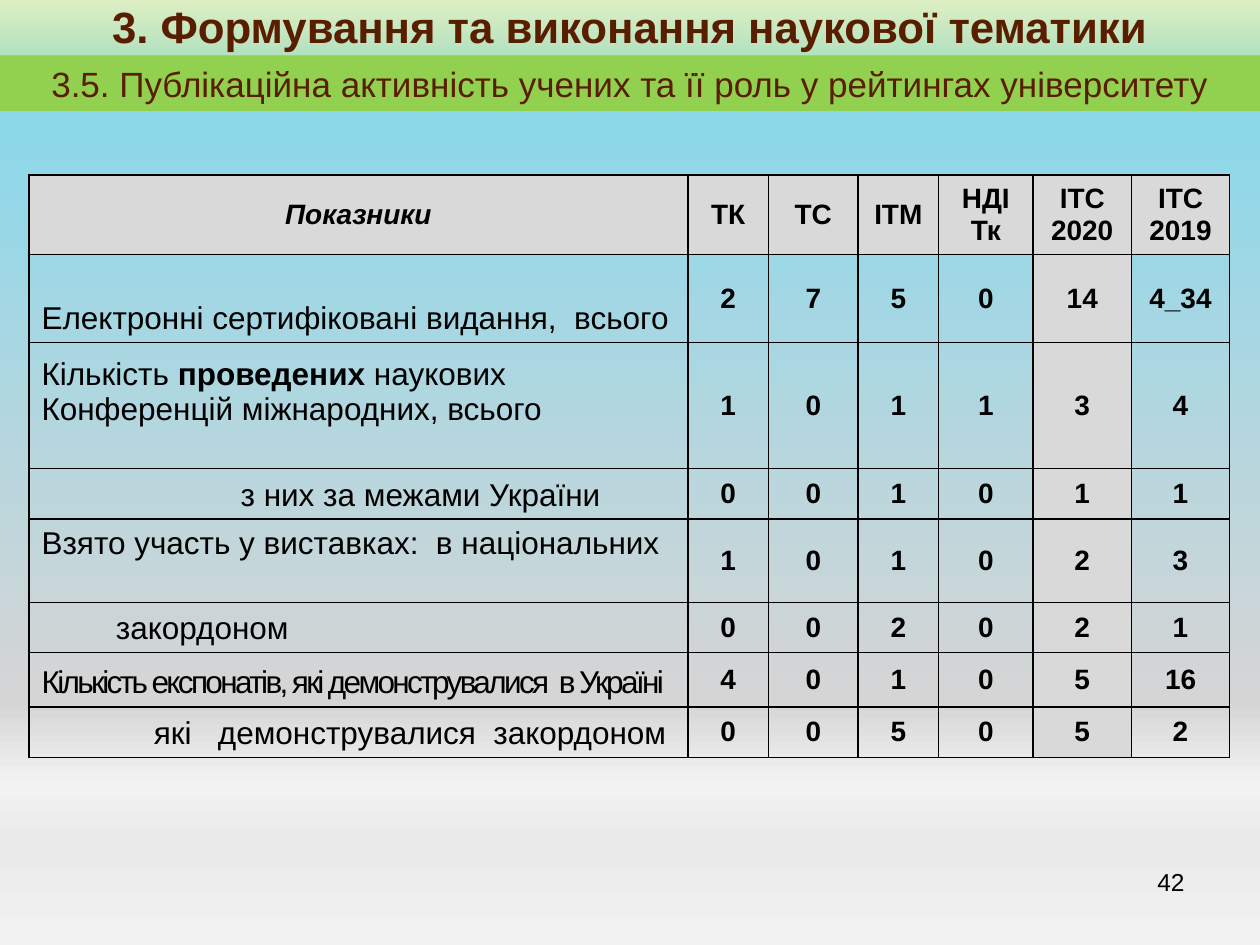
"""Build the slide on publication activity with its table of indicators."""
from lxml import etree
from pptx import Presentation
from pptx.dml.color import RGBColor
from pptx.enum import shapes, text
from pptx.oxml import ns
from pptx.util import Inches, Pt

BLACK = RGBColor(0x00, 0x00, 0x00)
BROWN = RGBColor(0x59, 0x1E, 0x00)
GREEN = RGBColor(0x92, 0xD0, 0x50)
GRAY = RGBColor(0xD9, 0xD9, 0xD9)
BACKGROUND_STOPS = [
    (0, RGBColor(0xFF, 0xFD, 0xF6)),
    (11, RGBColor(0x8A, 0xD8, 0xEA)),
    (74, RGBColor(0xD5, 0xD5, 0xD5)),
    (83, RGBColor(0xF2, 0xF2, 0xF2)),
    (89, RGBColor(0xEA, 0xEA, 0xEA)),
    (100, RGBColor(0xF2, 0xF2, 0xF2)),
]
LEFT, CENTER, RIGHT = text.PP_ALIGN.LEFT, text.PP_ALIGN.CENTER, text.PP_ALIGN.RIGHT
TOP, MIDDLE, BOTTOM = text.MSO_ANCHOR.TOP, text.MSO_ANCHOR.MIDDLE, text.MSO_ANCHOR.BOTTOM


def add_element(parent, tag, **attributes):
    return etree.SubElement(parent, ns.qn(tag), **attributes)


def write_text(frame, content, size=16, color=BLACK, bold=False, italic=False,
               align=CENTER, indent=None, spacing=None):
    """Write lines of content; words between asterisks are bold."""
    for index, line in enumerate(content.split("\n")):
        paragraph = frame.add_paragraph() if index else frame.paragraphs[0]
        paragraph.alignment = align
        if indent:
            properties = paragraph._p.get_or_add_pPr()
            properties.set("marL", str(Inches(indent[0])))
            properties.set("indent", str(Inches(indent[1])))
        for position, piece in enumerate(line.split("*")):
            run = paragraph.add_run()
            run.text = piece
            run.font.name = "Arial"
            run.font.size = Pt(size)
            run.font.color.rgb = color
            run.font.bold = bold or position % 2 == 1
            run.font.italic = italic
            if spacing:
                run._r.get_or_add_rPr().set("spc", str(int(spacing * 100)))


presentation = Presentation()
presentation.slide_width = Inches(10)
presentation.slide_height = Inches(7.5)
slide = presentation.slides.add_slide(presentation.slide_layouts[6])

background_fill = slide.background.fill
background_fill.gradient()
background_fill.gradient_angle = 270
stop_list = next(slide._element.iter(ns.qn("a:gsLst")))
for stop in list(stop_list):
    stop_list.remove(stop)
for percent, color in BACKGROUND_STOPS:
    stop = add_element(stop_list, "a:gs", pos=str(percent * 1000))
    add_element(stop, "a:srgbClr", val=str(color))

column_widths = [5.23, 0.64, 0.71, 0.64, 0.75, 0.78, 0.78]
row_heights = [0.63, 0.7, 1, 0.4, 0.4, 0.4, 0.43, 0.4]
headings = ["Показники", "ТК", "ТС", "ІТМ", "НДІ Тк", "ІТС 2020", "ІТС 2019"]
hanging = {"indent": (0.38, -0.38)}
rows = [
    ("Електронні сертифіковані видання,  всього", hanging, 0.05, "2 7 5 0 14 4_34"),
    ("Кількість *проведених* наукових\nКонференцій міжнародних, всього",
     hanging, 0.33, "1 0 1 1 3 4"),
    ("з них за межами України", {"indent": (0.38, 1.2)}, 0.05, "0 0 1 0 1 1"),
    ("Взято участь у виставках:  в національних", hanging, 0.33, "1 0 1 0 2 3"),
    ("закордоном", {"indent": (0.38, 0.21)}, 0.05, "0 0 2 0 2 1"),
    ("Кількість експонатів, які демонструвалися  в Україні",
     {"spacing": -1.5, **hanging}, 0.05, "4 0 1 0 5 16"),
    ("які   демонструвалися  закордоном",
     {"align": RIGHT, "indent": (0.59, -0.59)}, 0.05, "0 0 5 0 5 2"),
]

table = slide.shapes.add_table(
    len(row_heights), len(column_widths), Inches(0.23), Inches(1.39),
    Inches(sum(column_widths)), Inches(sum(row_heights))).table
table.first_row = table.horz_banding = False
for column, width in zip(table.columns, column_widths):
    column.width = Inches(width)
for row, height in zip(table.rows, row_heights):
    row.height = Inches(height)

for cell in table.iter_cells():
    cell.vertical_anchor = MIDDLE
    for side in ("a:lnL", "a:lnR", "a:lnT", "a:lnB"):
        border = add_element(cell._tc.get_or_add_tcPr(), side, w=str(Pt(1)))
        add_element(add_element(border, "a:solidFill"), "a:srgbClr", val=str(BLACK))
    cell.fill.background()

for column_index, heading in enumerate(headings):
    cell = table.cell(0, column_index)
    write_text(cell.text_frame, heading, bold=True, italic=column_index == 0)
for row_index, (label, label_format, bottom, values) in enumerate(rows, 1):
    cell = table.cell(row_index, 0)
    cell.vertical_anchor = BOTTOM
    cell.margin_bottom = Inches(bottom)
    if label_format.get("align") == RIGHT:
        cell.margin_right = Inches(0.17)
    write_text(cell.text_frame, label, **{"size": 18, "align": LEFT, **label_format})
    for column_index, value in enumerate(values.split(), 1):
        cell = table.cell(row_index, column_index)
        cell.margin_left = cell.margin_right = cell.margin_top = cell.margin_bottom = 0
        write_text(cell.text_frame, value, bold=True)

shaded_column = headings.index("ІТС 2020")
for row_index in range(len(row_heights)):
    for column_index in range(len(headings)):
        if row_index == 0 or column_index == shaded_column:
            cell = table.cell(row_index, column_index)
            cell.fill.solid()
            cell.fill.fore_color.rgb = GRAY

bands = [
    ("3. Формування та виконання наукової тематики", (-0.01, 0, 10.01, 0.6),
     30, TOP, 0, {"size": 25, "bold": True}),
    ("3.5. Публікаційна активність учених та її роль у рейтингах університету",
     (0, 0.44, 10, 0.44), 100, MIDDLE, 0.05, {"size": 20}),
]
for title, box, opacity, anchor, top, title_format in bands:
    band = slide.shapes.add_shape(shapes.MSO_SHAPE.RECTANGLE, *map(Inches, box))
    band.shadow.inherit = False
    band.line.fill.background()
    band.fill.solid()
    band.fill.fore_color.rgb = GREEN
    if opacity < 100:
        color_element = next(band._element.spPr.iter(ns.qn("a:srgbClr")))
        add_element(color_element, "a:alpha", val=str(opacity * 1000))
    band.text_frame.word_wrap = True
    band.text_frame.vertical_anchor = anchor
    band.text_frame.margin_top = Inches(top)
    write_text(band.text_frame, title, color=BROWN, **title_format)

page_number = slide.shapes.add_textbox(Inches(7.17), Inches(6.83), Inches(2.33), Inches(0.52))
page_number.text_frame.word_wrap = True
write_text(page_number.text_frame, "42", size=14, align=RIGHT)

presentation.save("out.pptx")
